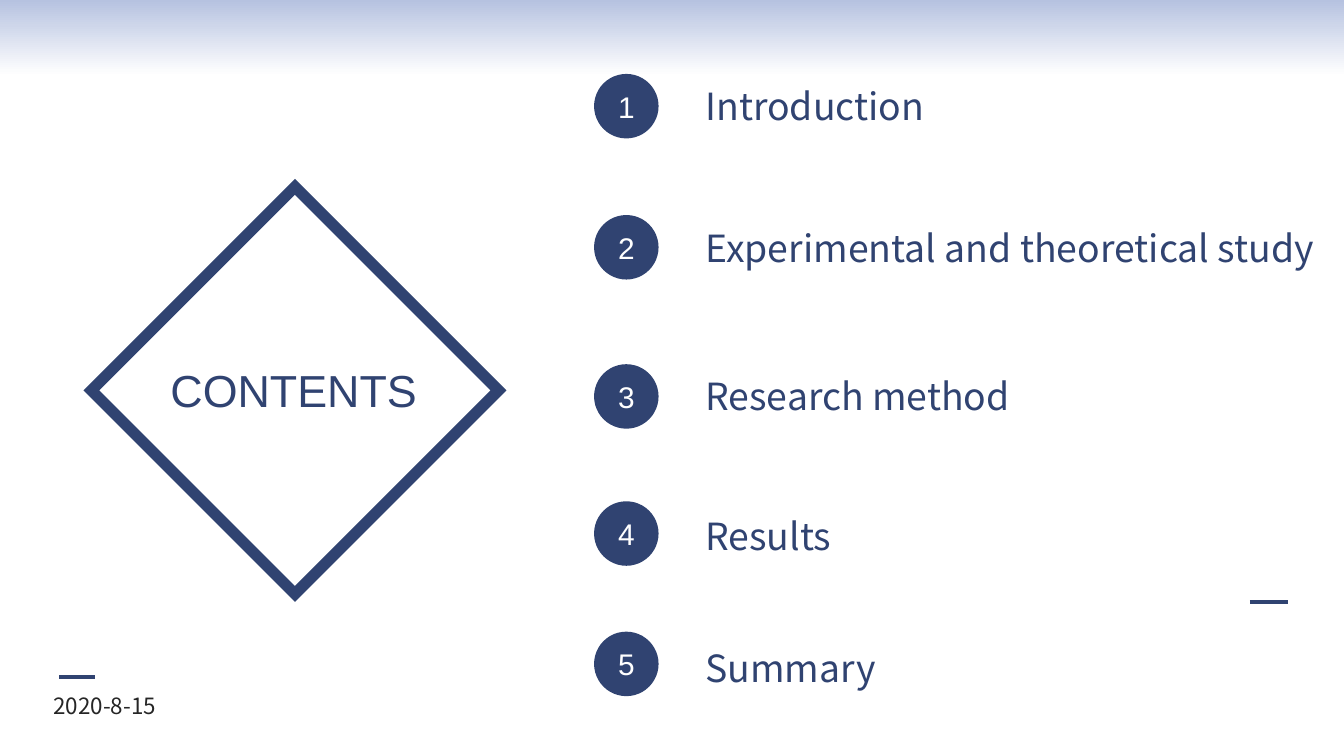
from dataclasses import dataclass

import pptx
import pptx.dml.color
import pptx.enum.shapes
import pptx.enum.text
import pptx.oxml.ns
import pptx.util
from lxml import etree
from pptx.util import Inches

NAVY = "304371"
WHITE = "FFFFFF"
DATE_GREY = "262626"
LATIN_FONT = "Arial"
HEADING_FONT = "Noto Sans CJK SC"

BADGE_LEFT, BADGE_SIZE = 4.42, 0.48
HEADING_LEFT, HEADING_HEIGHT = 5.15, 0.44


@dataclass
class Section:
    title: str
    badge_top: float
    title_top: float
    title_width: float
    wrap: bool = False


@dataclass
class Dash:
    left: float
    right: float
    y: float


SECTIONS = [
    Section("Introduction", 0.55, 0.57, 2.04, True),
    Section("Experimental and theoretical study", 1.6, 1.63, 4.85, True),
    Section("Research method", 2.71, 2.73, 2.54),
    Section("Results", 3.73, 3.77, 1.15),
    Section("Summary", 4.7, 4.75, 1.49),
]
DASHES = [Dash(9.3, 9.58, 4.48), Dash(0.44, 0.71, 5.04)]


def rgb(color: str) -> pptx.dml.color.RGBColor:
    return pptx.dml.color.RGBColor.from_string(color)


def write(shape, text: str, size: float, font: str, color: str, centred: bool = False) -> None:
    paragraph = shape.text_frame.paragraphs[0]
    paragraph.text = text
    if centred:
        paragraph.alignment = pptx.enum.text.PP_ALIGN.CENTER
    run_font = paragraph.runs[0].font
    run_font.size = pptx.util.Pt(size)
    run_font.name = font
    run_font.color.rgb = rgb(color)


def add_text(slide, left: float, top: float, width: float, height: float, text: str,
             size: float, font: str, color: str, centred: bool = False,
             wrap: bool = False) -> None:
    box = slide.shapes.add_textbox(Inches(left), Inches(top), Inches(width), Inches(height))
    box.text_frame.word_wrap = wrap
    box.text_frame.auto_size = pptx.enum.text.MSO_AUTO_SIZE.SHAPE_TO_FIT_TEXT
    write(box, text, size, font, color, centred)


def add_dash(slide, dash: Dash) -> None:
    line = slide.shapes.add_connector(
        pptx.enum.shapes.MSO_CONNECTOR.STRAIGHT,
        Inches(dash.left), Inches(dash.y), Inches(dash.right), Inches(dash.y))
    line.line.color.rgb = rgb(NAVY)
    line.line.width = pptx.util.Pt(2.25)
    etree.SubElement(line._element.spPr, pptx.oxml.ns.qn("a:effectLst"))


def add_diamond(slide, left: float, top: float, size: float) -> None:
    diamond = slide.shapes.add_shape(
        pptx.enum.shapes.MSO_SHAPE.DIAMOND,
        Inches(left), Inches(top), Inches(size), Inches(size))
    diamond.shadow.inherit = False
    diamond.fill.background()
    diamond.line.color.rgb = rgb(NAVY)
    diamond.line.width = pptx.util.Pt(6)
    # Sharp corners
    outline = diamond._element.spPr.find(pptx.oxml.ns.qn("a:ln"))
    etree.SubElement(outline, pptx.oxml.ns.qn("a:miter"), lim="800000")


def add_section(slide, number: int, section: Section) -> None:
    badge = slide.shapes.add_shape(
        pptx.enum.shapes.MSO_SHAPE.OVAL, Inches(BADGE_LEFT), Inches(section.badge_top),
        Inches(BADGE_SIZE), Inches(BADGE_SIZE))
    badge.shadow.inherit = False
    badge.fill.solid()
    badge.fill.fore_color.rgb = rgb(NAVY)
    badge.line.fill.background()
    badge.text_frame.vertical_anchor = pptx.enum.text.MSO_ANCHOR.MIDDLE
    write(badge, str(number), 16, LATIN_FONT, WHITE, centred=True)
    add_text(slide, HEADING_LEFT, section.title_top, section.title_width, HEADING_HEIGHT,
             section.title, 20, HEADING_FONT, NAVY, wrap=section.wrap)


def set_background(slide) -> None:
    fill = slide.background.fill
    fill.gradient()
    fill.gradient_angle = 270
    for stop, position, color in zip(fill.gradient_stops, (0, 0.1), ("B6C2E0", WHITE)):
        stop.position = position
        stop.color.rgb = rgb(color)


def main() -> None:
    # Widescreen 16:9 page
    presentation = pptx.Presentation()
    presentation.slide_width = Inches(10)
    presentation.slide_height = Inches(10 * 9 / 16)
    slide = presentation.slides.add_slide(presentation.slide_layouts[6])
    set_background(slide)

    # Accent dashes and date
    for dash in DASHES:
        add_dash(slide, dash)
    add_text(slide, 0.3, 5.1, 1.04, 0.3, "2020-8-15", 12, HEADING_FONT, DATE_GREY)

    # Contents diamond
    add_diamond(slide, 0.68, 1.39, 3.03)
    add_text(slide, 1.16, 2.65, 2.05, 0.5, "CONTENTS", 24, LATIN_FONT, NAVY, centred=True)

    # Numbered sections
    for number, section in enumerate(SECTIONS, start=1):
        add_section(slide, number, section)

    presentation.save("out.pptx")


if __name__ == "__main__":
    main()
